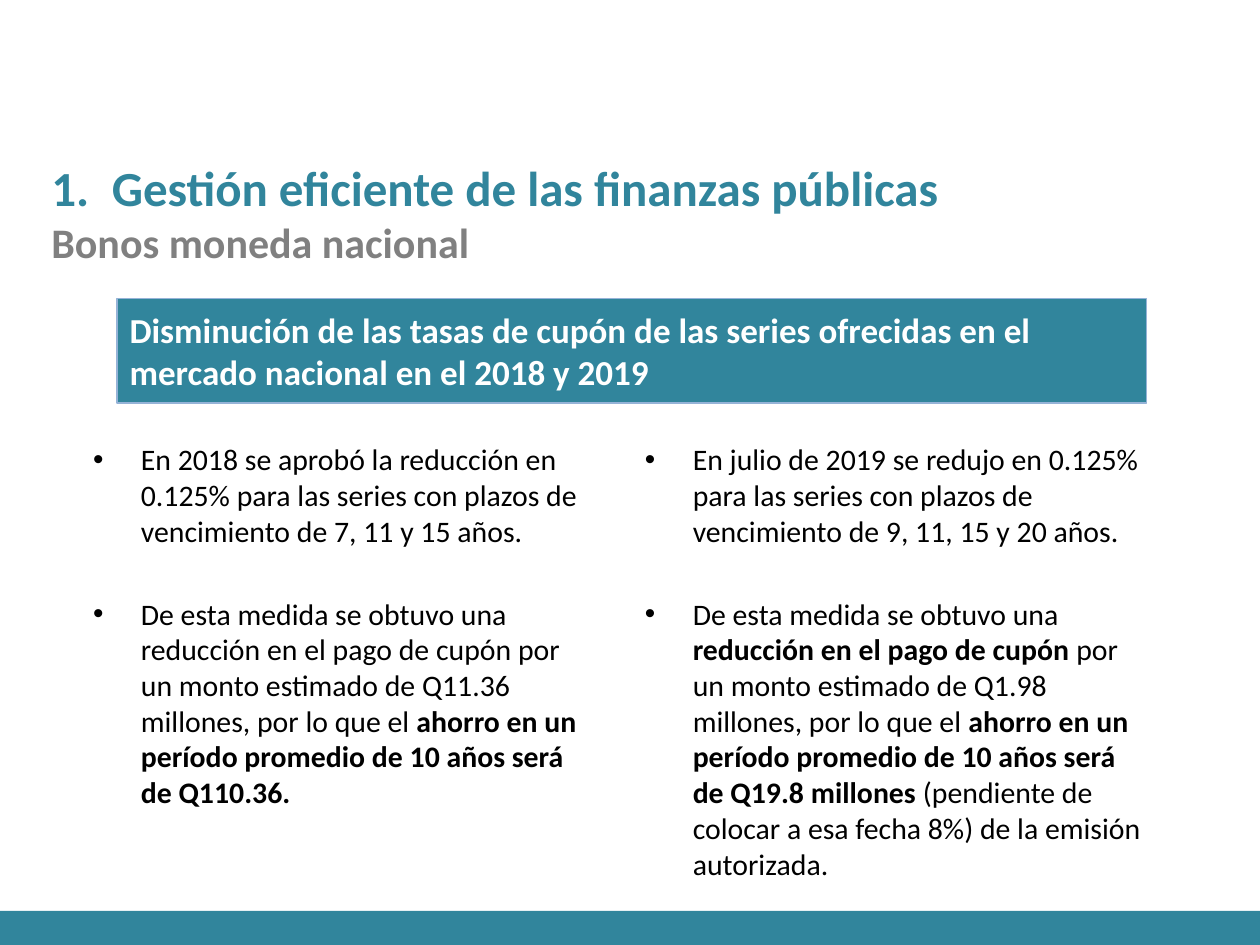
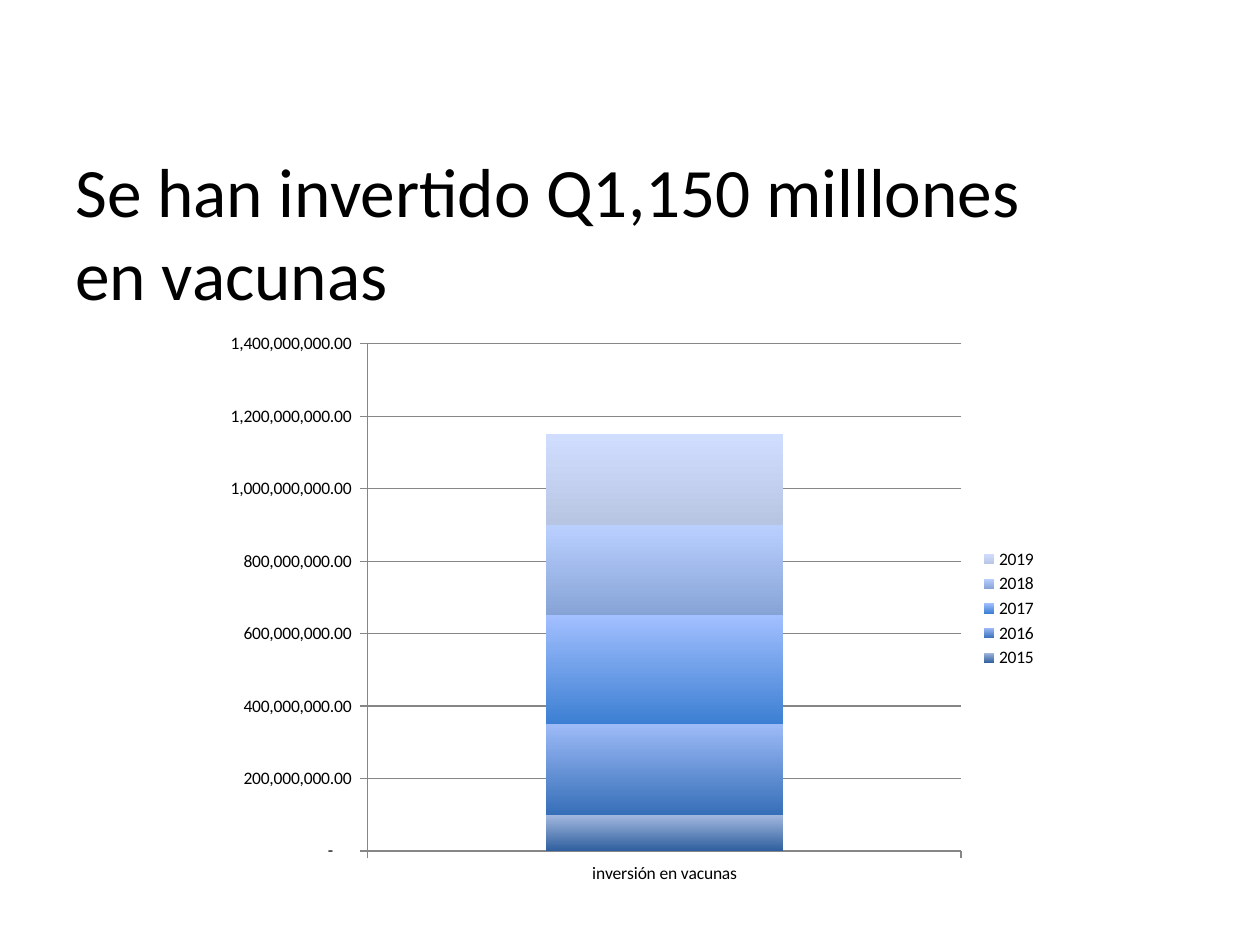
import pptx
import pptx.chart.data
import pptx.dml.color
import pptx.enum.chart
import pptx.enum.shapes
import pptx.enum.text
import pptx.util
from lxml import etree
from pptx.oxml.ns import qn

WIDTH, HEIGHT = 10, 7.5
FONT = "Calibri"
COLORS = {
    "teal": "31859C",
    "teal edge": "95B3D7",
    "gray": "808080",
    "black": "000000",
    "white": "FFFFFF",
    "axis": "868686",
}

SECTION_TITLE = "1.\tGestión eficiente de las finanzas públicas"
SECTION_SUBTITLE = "Bonos moneda nacional"
BANNER = "Disminución de las tasas de cupón de las series ofrecidas en el\vmercado nacional en el 2018 y 2019"

# Each column is a list of bullets; each bullet is a list of (text, bold) runs.
COLUMNS = [
    [
        [("En 2018 se aprobó la reducción en 0.125% para las series con plazos de "
          "vencimiento de 7, 11 y 15 años.", False)],
        [("De esta medida se obtuvo una reducción en el pago de cupón por un monto "
          "estimado de Q11.36 millones, por lo que el ", False),
         ("ahorro en un período promedio de 10 años será de Q110.36.", True)],
    ],
    [
        [("En julio de 2019 se redujo en 0.125% para las series con plazos de "
          "vencimiento de 9, 11, 15 y 20 años.", False)],
        [("De esta medida se obtuvo una ", False),
         ("reducción en el pago de cupón ", True),
         ("por un monto estimado de Q1.98 millones, por lo que el ", False),
         ("ahorro en un período promedio de 10 años será de Q19.8 millones", True),
         (" (pendiente de colocar a esa fecha 8%) de la emisión autorizada.", False)],
    ],
]
COLUMN_LEFT, COLUMN_TOP, COLUMN_WIDTH, COLUMN_GAP = 0.64, 3.45, 4.17, 0.21
BULLET_INDENT = 0.38

VACCINE_TITLE = "Se han invertido Q1,150 milllones\ven vacunas"
VACCINE_CATEGORY = "inversión en vacunas"
# Year, amount, gradient from bottom to top
VACCINE_SERIES = [
    ("2015", 100_000_000, "2E5F9E", "A3B8DF"),
    ("2016", 250_000_000, "366FB8", "9DBAF7"),
    ("2017", 300_000_000, "3C7FD2", "A2BFFF"),
    ("2018", 250_000_000, "87A3D6", "B9D0FF"),
    ("2019", 250_000_000, "B7C5E3", "D1DDFF"),
]
AMOUNT_FORMAT = '_(* #,##0.00_);_(* \\(#,##0.00\\);_(* "-"??_);_(@_)'


def rgb(hex_color):
    return pptx.dml.color.RGBColor.from_string(hex_color)


def inches(*lengths):
    return [pptx.util.Inches(length) for length in lengths]


def style_font(font, size, color="black", bold=False):
    font.name = FONT
    font.size = pptx.util.Pt(size)
    font.color.rgb = rgb(COLORS[color])
    font.bold = bold


def add_text_box(slide, box, anchor):
    frame = slide.shapes.add_textbox(*inches(*box)).text_frame
    frame.word_wrap = True
    frame.vertical_anchor = anchor
    return frame


def add_band(slide, box, edge=None):
    band = slide.shapes.add_shape(pptx.enum.shapes.MSO_SHAPE.RECTANGLE, *inches(*box))
    band.shadow.inherit = False
    band.fill.solid()
    band.fill.fore_color.rgb = rgb(COLORS["teal"])
    if edge:
        band.line.color.rgb = rgb(COLORS[edge])
        band.line.width = pptx.util.Pt(0.75)
    else:
        band.line.fill.background()
    return band


def write_line(paragraph, text, size, color="black", bold=False):
    paragraph.text = text
    paragraph.alignment = pptx.enum.text.PP_ALIGN.LEFT
    style_font(paragraph.font, size, color, bold)


def add_tab_stop(paragraph, position):
    tabs = etree.SubElement(paragraph._p.get_or_add_pPr(), qn("a:tabLst"))
    etree.SubElement(tabs, qn("a:tab"), pos=str(pptx.util.Inches(position)), algn="l")


def add_bullet(paragraph):
    indent = pptx.util.Inches(BULLET_INDENT)
    properties = paragraph._p.get_or_add_pPr()
    properties.set("marL", str(indent))
    properties.set("indent", str(-indent))
    etree.SubElement(properties, qn("a:buFont"), typeface="Arial")
    etree.SubElement(properties, qn("a:buChar"), char="•")


def add_bullet_column(slide, box, bullets):
    frame = add_text_box(slide, box, pptx.enum.text.MSO_ANCHOR.TOP)
    for index, runs in enumerate(bullets):
        paragraph = frame.add_paragraph() if index else frame.paragraphs[0]
        add_bullet(paragraph)
        style_font(paragraph.font, 17)
        if index:
            paragraph.space_before = pptx.util.Pt(27)
        for text, bold in runs:
            run = paragraph.add_run()
            run.text = text
            run.font.bold = bold


def build_bonds_slide(slide):
    footer_height = 0.27
    add_band(slide, (0, HEIGHT - footer_height, WIDTH, footer_height))

    heading = add_text_box(slide, (0.31, 1.1, 9, 1.17), pptx.enum.text.MSO_ANCHOR.MIDDLE)
    add_tab_stop(heading.paragraphs[0], 0.48)
    write_line(heading.paragraphs[0], SECTION_TITLE, 28, "teal", True)
    write_line(heading.add_paragraph(), SECTION_SUBTITLE, 24, "gray", True)

    banner = add_band(slide, (0.93, 2.37, 8.17, 0.83), "teal edge").text_frame
    banner.word_wrap = True
    banner.vertical_anchor = pptx.enum.text.MSO_ANCHOR.MIDDLE
    write_line(banner.paragraphs[0], BANNER, 20, "white", True)

    for index, bullets in enumerate(COLUMNS):
        left = COLUMN_LEFT + index * (COLUMN_WIDTH + COLUMN_GAP)
        add_bullet_column(slide, (left, COLUMN_TOP, COLUMN_WIDTH, 3.7), bullets)


def style_axis(axis):
    axis.major_tick_mark = pptx.enum.chart.XL_TICK_MARK.OUTSIDE
    axis.minor_tick_mark = pptx.enum.chart.XL_TICK_MARK.NONE
    axis.format.line.color.rgb = rgb(COLORS["axis"])


def add_vaccine_chart(slide, box):
    data = pptx.chart.data.CategoryChartData(number_format=AMOUNT_FORMAT)
    data.categories = [VACCINE_CATEGORY]
    for year, amount, _, _ in VACCINE_SERIES:
        data.add_series(year, [amount])
    chart = slide.shapes.add_chart(
        pptx.enum.chart.XL_CHART_TYPE.COLUMN_STACKED, *inches(*box), data).chart
    style_font(chart.font, 10)
    chart.has_title = False
    chart.has_legend = True
    chart.legend.position = pptx.enum.chart.XL_LEGEND_POSITION.RIGHT
    chart.legend.include_in_layout = False

    plot = chart.plots[0]
    plot.gap_width = 150
    plot.overlap = 100
    plot.vary_by_categories = False
    for series, (_, _, *gradient) in zip(plot.series, VACCINE_SERIES):
        fill = series.format.fill
        fill.gradient()
        fill.gradient_angle = 90
        for stop, color in zip(fill.gradient_stops, gradient):
            stop.color.rgb = rgb(color)

    style_axis(chart.category_axis)
    style_axis(chart.value_axis)
    chart.value_axis.has_major_gridlines = True
    chart.value_axis.major_gridlines.format.line.color.rgb = rgb(COLORS["axis"])
    chart.value_axis.tick_labels.number_format = AMOUNT_FORMAT
    chart.value_axis.tick_labels.number_format_is_linked = False


def build_vaccine_slide(slide):
    title = add_text_box(slide, (0.5, 1.37, 9, 0.93), pptx.enum.text.MSO_ANCHOR.MIDDLE)
    write_line(title.paragraphs[0], VACCINE_TITLE, 39.6)
    add_vaccine_chart(slide, (WIDTH / 6, 2.56, WIDTH * 2 / 3, 4.54))


def main():
    presentation = pptx.Presentation()
    presentation.slide_width, presentation.slide_height = inches(WIDTH, HEIGHT)
    blank = presentation.slide_layouts[6]
    for build in (build_bonds_slide, build_vaccine_slide):
        build(presentation.slides.add_slide(blank))
    presentation.save("out.pptx")


if __name__ == "__main__":
    main()
